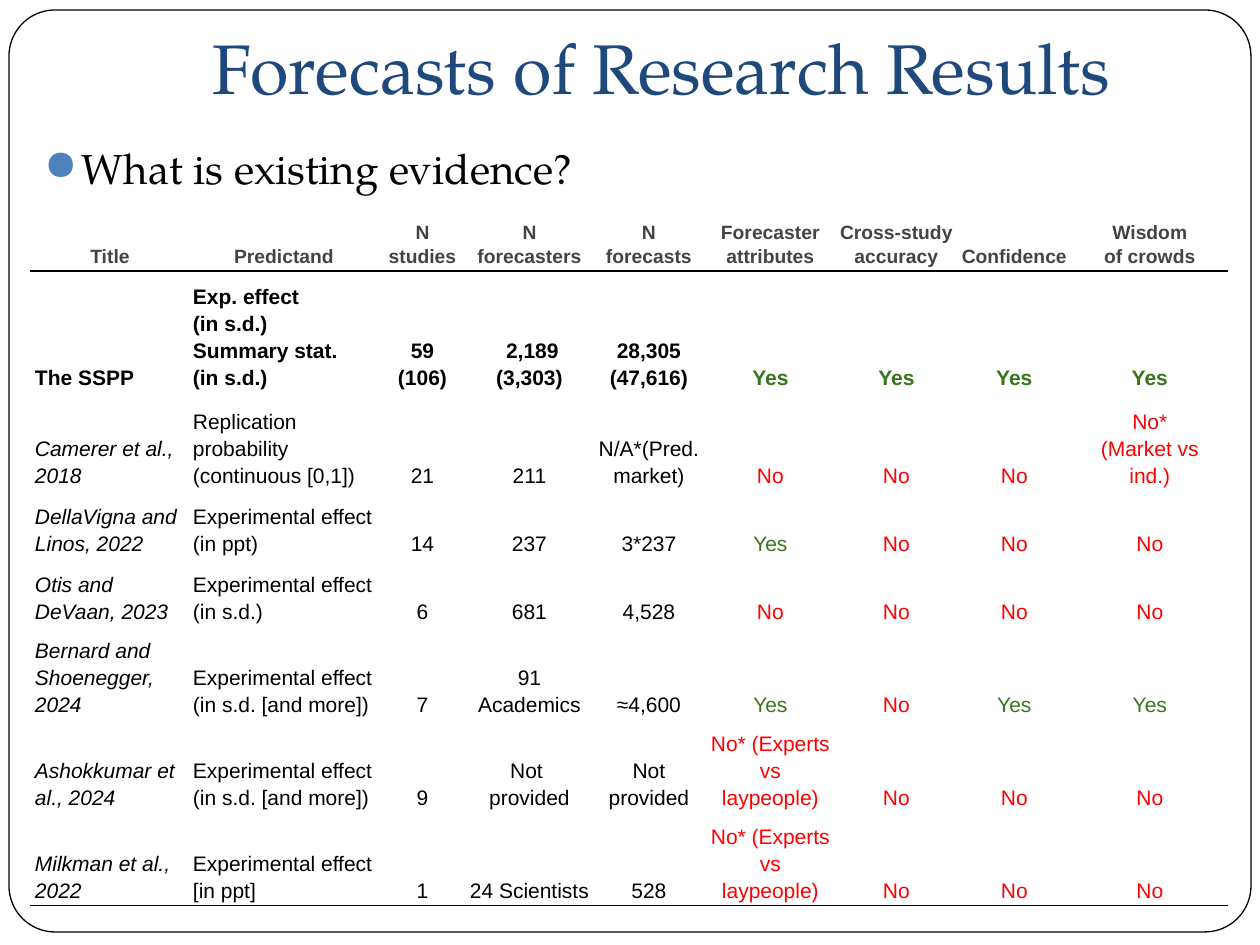
from dataclasses import dataclass

from lxml import etree
from pptx import Presentation
from pptx.dml.color import RGBColor
from pptx.enum.shapes import MSO_SHAPE
from pptx.enum.text import MSO_ANCHOR, PP_ALIGN
from pptx.oxml.ns import qn
from pptx.util import Pt

ROUNDED = MSO_SHAPE.ROUNDED_RECTANGLE
TOP, BOTTOM = MSO_ANCHOR.TOP, MSO_ANCHOR.BOTTOM
LEFT, CENTER = PP_ALIGN.LEFT, PP_ALIGN.CENTER
EMU_PER_PX = 914400 // 126


@dataclass(frozen=True)
class Theme:
    """Colours, fonts and type sizes of the slide."""
    white: str = "FFFFFF"
    ink: str = "000000"
    title: str = "1F497D"
    bullet: str = "4F81BD"
    header: str = "434343"
    yes: str = "38761D"
    no: str = "FF0000"
    serif: str = "TeX Gyre Pagella"
    sans: str = "Arial"
    title_size: int = 40
    body_size: int = 24
    header_size: int = 11
    cell_size: int = 12
    hairline: float = 0.75
    leading: float = 1.15


THEME = Theme()

COLUMN_WIDTHS = [158, 190, 87, 127, 112, 131, 121, 115, 156]
ROW_HEIGHTS = [68, 110, 98, 68, 68, 83, 83, 83]
FIRST_VERDICT = 5
ROOMY_CELL = (2, 8)
STUDIES = [
    ["Title", "Predictand", "N\nstudies", "N\nforecasters", "N\nforecasts",
     "Forecaster\nattributes", "Cross-study\naccuracy", "Confidence", "Wisdom\nof crowds"],
    ["The SSPP", "Exp. effect\n(in s.d.)\nSummary stat.\n(in s.d.)", "59\n(106)",
     " 2,189\n(3,303)", "28,305\n(47,616)", "Yes", "Yes", "Yes", "Yes"],
    ["Camerer et al., 2018", "Replication probability\n(continuous [0,1])", "21", "211",
     "N/A*(Pred. market)", "No", "No", "No", "No*\n(Market vs ind.)"],
    ["DellaVigna and Linos, 2022", "Experimental effect\n(in ppt)", "14", "237", "3*237",
     "Yes", "No", "No", "No"],
    ["Otis and DeVaan, 2023", "Experimental effect\n(in s.d.)", "6", "681", "4,528",
     "No", "No", "No", "No"],
    ["Bernard and Shoenegger, 2024", "Experimental effect\n(in s.d. [and more])", "7",
     "91 Academics", "≈4,600", "Yes", "No", "Yes", "Yes"],
    ["Ashokkumar et al., 2024", "Experimental effect\n(in s.d. [and more])", "9",
     "Not \nprovided", "Not provided", "No* (Experts vs laypeople)", "No", "No", "No"],
    ["Milkman et al., 2022", "Experimental effect\n[in ppt]", "1", "24 Scientists", "528",
     "No* (Experts vs laypeople)", "No", "No", "No"],
]


def px(length):
    """Turn pixels into EMU."""
    return length * EMU_PER_PX


def add_run(paragraph, text, font, size, color, bold=False, italic=False):
    """Append one styled run to a paragraph."""
    run = paragraph.add_run()
    run.text = text
    run.font.name, run.font.size = font, Pt(size)
    run.font.color.rgb = RGBColor.from_string(color)
    run.font.bold, run.font.italic = bold, italic


def add_text_frame(slide, box, anchor, bottom_inset):
    """Add a wrapping text box and return its frame."""
    frame = slide.shapes.add_textbox(*map(px, box)).text_frame
    frame.word_wrap = True
    frame.vertical_anchor = anchor
    frame.margin_left = frame.margin_right = px(13)
    frame.margin_top, frame.margin_bottom = px(6), px(bottom_inset)
    return frame


def add_border_panel(slide, box):
    """Draw the rounded outline around the slide."""
    panel = slide.shapes.add_shape(ROUNDED, *map(px, box))
    panel.adjustments[0] = 0.05
    panel.shadow.inherit = False
    panel.fill.solid()
    panel.fill.fore_color.rgb = RGBColor.from_string(THEME.white)
    panel.line.color.rgb = RGBColor.from_string(THEME.ink)
    panel.line.width = Pt(THEME.hairline)


def add_title(slide, box):
    """Write the centred slide title."""
    heading = add_text_frame(slide, box, BOTTOM, 13).paragraphs[0]
    heading.alignment = CENTER
    add_run(heading, "Forecasts of Research Results", THEME.serif, THEME.title_size, THEME.title)


def add_question(slide, box):
    """Write the bulleted question."""
    question = add_text_frame(slide, box, TOP, 6).paragraphs[0]
    properties = question._p.get_or_add_pPr()
    properties.set("marL", str(px(38)))
    properties.set("indent", str(px(-38)))
    bullet_color = etree.SubElement(properties, qn("a:buClr"))
    etree.SubElement(bullet_color, qn("a:srgbClr"), val=THEME.bullet)
    etree.SubElement(properties, qn("a:buChar"), char="●")
    add_run(question, "What is existing evidence?", THEME.serif, THEME.body_size, THEME.ink)


def set_borders(cell, row):
    """Rule the header and the last row in ink, the rest in white."""
    last = len(STUDIES) - 1
    edges = {"L": THEME.white, "R": THEME.white,
             "T": THEME.ink if row == 1 else THEME.white,
             "B": THEME.ink if row in (0, last) else THEME.white}
    properties = cell._tc.get_or_add_tcPr()
    for edge, color in edges.items():
        line = etree.SubElement(properties, qn(f"a:ln{edge}"), w=str(Pt(THEME.hairline)))
        fill = etree.SubElement(line, qn("a:solidFill"))
        etree.SubElement(fill, qn("a:srgbClr"), val=color)


def text_color(row, column, text):
    """Choose the colour of a cell from its role and verdict."""
    if row == 0:
        return THEME.header
    if column < FIRST_VERDICT:
        return THEME.ink
    return THEME.yes if text.startswith("Yes") else THEME.no


def fill_cell(cell, row, column, text):
    """Write and style one table cell."""
    set_borders(cell, row)
    cell.fill.background()
    cell.vertical_anchor = BOTTOM
    cell.margin_left = cell.margin_right = px(13 if (row, column) == ROOMY_CELL else 4)
    cell.margin_top = cell.margin_bottom = px(3)
    frame = cell.text_frame
    for index, line in enumerate(text.split("\n")):
        paragraph = frame.add_paragraph() if index else frame.paragraphs[0]
        paragraph.alignment = LEFT if row and column < 2 else CENTER
        paragraph.line_spacing = THEME.leading
        add_run(paragraph, line, THEME.sans, THEME.cell_size if row else THEME.header_size,
                text_color(row, column, text), bold=row < 2, italic=row > 1 and column == 0)


def add_evidence_table(slide, left, top):
    """Build the table of forecasting studies."""
    table = slide.shapes.add_table(
        len(ROW_HEIGHTS), len(COLUMN_WIDTHS), px(left), px(top),
        px(sum(COLUMN_WIDTHS)), px(sum(ROW_HEIGHTS))).table
    table.first_row = table.horz_banding = False
    for column, width in zip(table.columns, COLUMN_WIDTHS):
        column.width = px(width)
    for row, height in zip(table.rows, ROW_HEIGHTS):
        row.height = px(height)
    for row, study in enumerate(STUDIES):
        for column, text in enumerate(study):
            fill_cell(table.cell(row, column), row, column, text)


def main():
    """Build and save the slide."""
    deck = Presentation()
    deck.slide_width, deck.slide_height = px(1260), px(945)
    slide = deck.slides.add_slide(deck.slide_layouts[6])
    add_border_panel(slide, (9, 10, 1242, 922))
    add_question(slide, (31, 136, 1229, 777))
    add_title(slide, (126, 38, 1071, 84))
    add_evidence_table(slide, 31, 203)
    deck.save("out.pptx")


if __name__ == "__main__":
    main()
